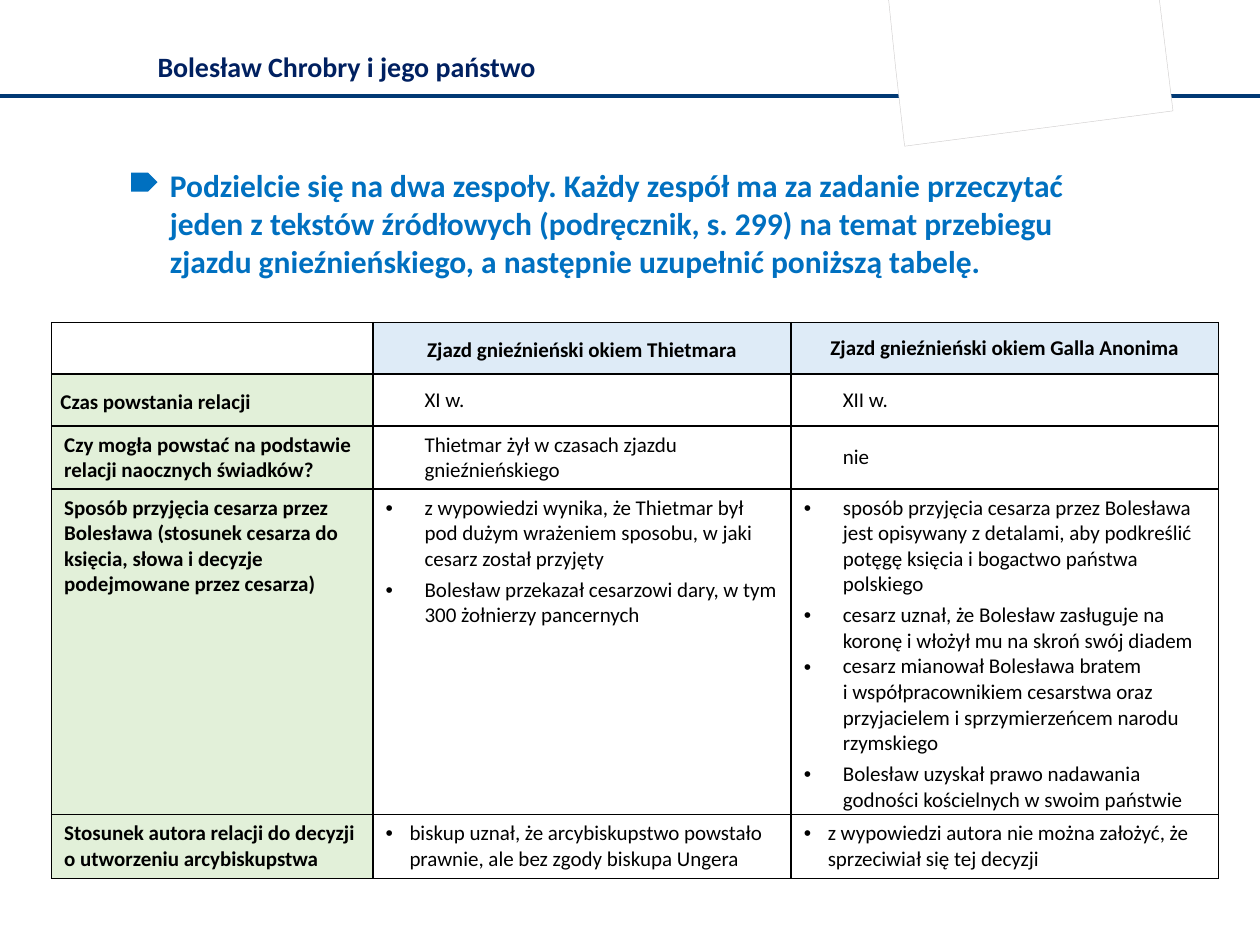
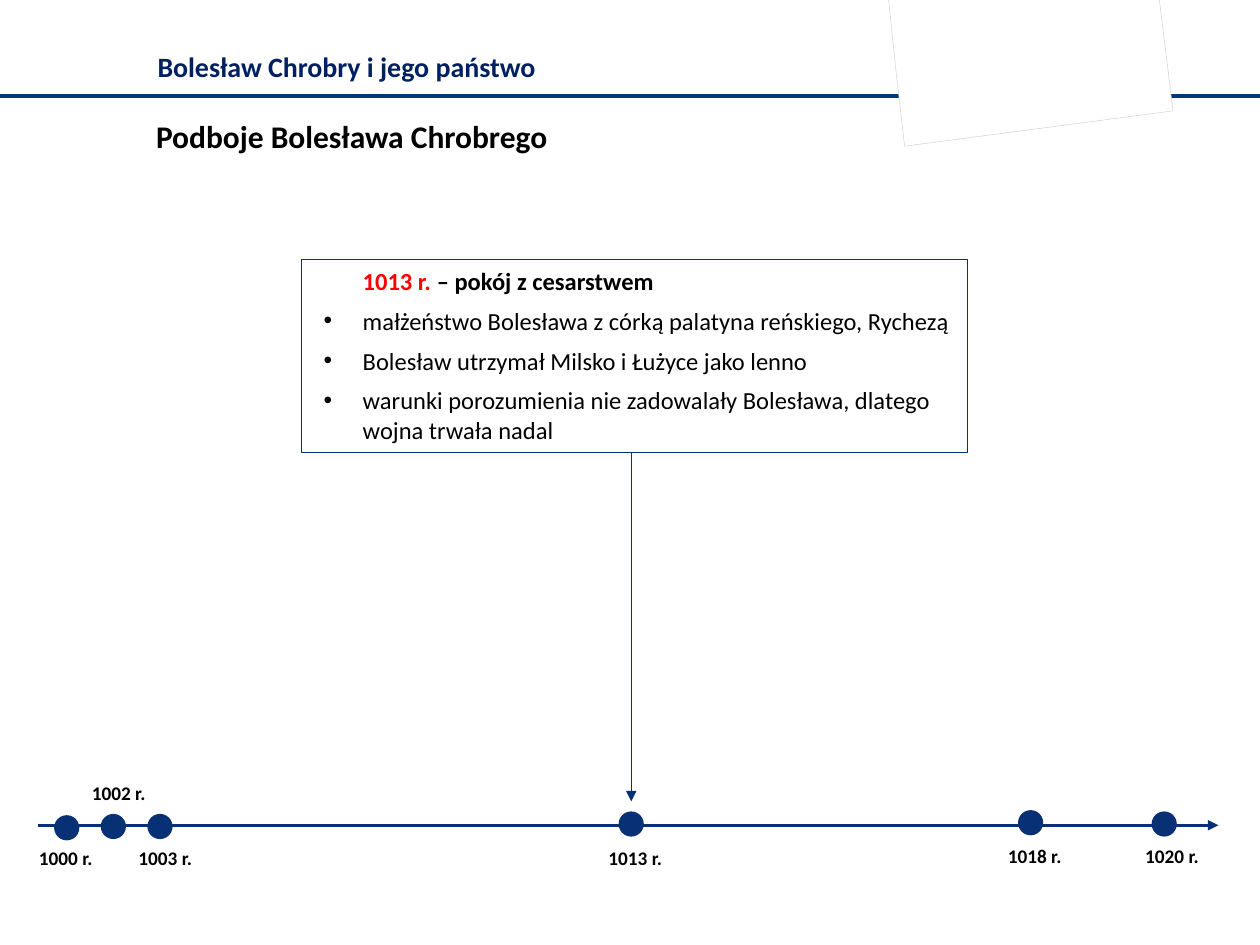
from lxml import etree
from pptx import Presentation
from pptx.dml.color import RGBColor
from pptx.enum.shapes import MSO_CONNECTOR, MSO_SHAPE
from pptx.enum.text import MSO_ANCHOR, MSO_AUTO_SIZE, PP_ALIGN
from pptx.oxml.ns import qn
from pptx.util import Inches, Pt

STRAIGHT = MSO_CONNECTOR.STRAIGHT
OVAL, RECT, PENTAGON = MSO_SHAPE.OVAL, MSO_SHAPE.RECTANGLE, MSO_SHAPE.PENTAGON
TOP, MIDDLE = MSO_ANCHOR.TOP, MSO_ANCHOR.MIDDLE
LEFT, CENTER = PP_ALIGN.LEFT, PP_ALIGN.CENTER
FONT = "Calibri"
COLORS = {
    "white": "FFFFFF", "black": "000000", "title": "002060", "rule": "013974",
    "card_edge": "D0CECE", "task": "0070C0", "header": "DEEBF7",
    "label": "E2F0D9", "timeline": "083074", "date": "FF0000",
}

LESSON = "Bolesław Chrobry i jego państwo"
CARD_CORNERS = [(9.31, 0.88), (7.18, 1.16), (7.11, 0.55), (7.05, -0.03), (9.2, -0.02)]

TASK = (
    "Podzielcie się na dwa zespoły. Każdy zespół ma za zadanie przeczytać jeden z tekstów "
    "źródłowych (podręcznik, s. 299) na temat przebiegu zjazdu gnieźnieńskiego, "
    "a następnie uzupełnić poniższą tabelę."
)
COLUMN_WIDTHS = [2.55, 3.32, 3.39]
ROW_HEIGHTS = [0.41, 0.41, 0.5, 2.58, 0.51]
HEADINGS = ["Zjazd gnieźnieński okiem Thietmara", "Zjazd gnieźnieński okiem Galla Anonima"]
# Each row: label, then the points found in each of the two accounts
ACCOUNTS = [
    ("Czas powstania relacji", ["XI w."], ["XII w."]),
    ("Czy mogła powstać na podstawie relacji naocznych świadków?",
     ["Thietmar żył w czasach zjazdu gnieźnieńskiego"], ["nie"]),
    ("Sposób przyjęcia cesarza przez Bolesława (stosunek cesarza do księcia, "
     "słowa i decyzje podejmowane przez cesarza)",
     ["z wypowiedzi wynika, że Thietmar był pod dużym wrażeniem sposobu, "
      "w jaki cesarz został przyjęty",
      "Bolesław przekazał cesarzowi dary, w tym 300 żołnierzy pancernych"],
     ["sposób przyjęcia cesarza przez Bolesława jest opisywany z detalami, "
      "aby podkreślić potęgę księcia i bogactwo państwa polskiego",
      "cesarz uznał, że Bolesław zasługuje na koronę i włożył mu na skroń swój diadem",
      "cesarz mianował Bolesława bratem\ni współpracownikiem cesarstwa oraz "
      "przyjacielem i sprzymierzeńcem narodu rzymskiego",
      "Bolesław uzyskał prawo nadawania godności kościelnych w swoim państwie"]),
    ("Stosunek autora relacji do decyzji\no utworzeniu arcybiskupstwa",
     ["biskup uznał, że arcybiskupstwo powstało prawnie, ale bez zgody biskupa Ungera"],
     ["z wypowiedzi autora nie można założyć, że sprzeciwiał się tej decyzji"]),
]
# Indent and bullet of the points, row by row
POINT_STYLES = [(0.31, False), (0.31, False), (0.31, True), (0.19, True)]

CONQUESTS = "Podboje Bolesława Chrobrego"
PEACE_DATE, PEACE = "1013 r. ", "– pokój z cesarstwem"
PEACE_TERMS = [
    "małżeństwo Bolesława z córką palatyna reńskiego, Rychezą",
    "Bolesław utrzymał Milsko i Łużyce jako lenno",
    "warunki porozumienia nie zadowalały Bolesława, dlatego wojna trwała nadal",
]
# Year, dot position, label position
EVENTS = [
    ("1000 r.", (0.43, 6.47), (0.21, 6.67)),
    ("1002 r.", (0.8, 6.46), (0.63, 6.15)),
    ("1003 r.", (1.17, 6.46), (1, 6.67)),
    ("1013 r.", (4.91, 6.44), (4.73, 6.67)),
    ("1018 r.", (8.08, 6.43), (7.9, 6.65)),
    ("1020 r.", (9.14, 6.44), (8.99, 6.65)),
]
DOT = 0.2


def rgb(color):
    return RGBColor.from_string(COLORS[color])


def add_run(paragraph, text, size, color="black", bold=False):
    for i, line in enumerate(text.split("\n")):
        if i:
            paragraph.add_line_break()
        run = paragraph.add_run()
        run.text = line
        run.font.name, run.font.size, run.font.bold = FONT, Pt(size), bold
        run.font.color.rgb = rgb(color)


def indent(paragraph, left, hanging=0):
    """Indent a paragraph; a hanging indent also gets a bullet."""
    props = paragraph._p.get_or_add_pPr()
    props.set("marL", str(Inches(left)))
    props.set("indent", str(-Inches(hanging)))
    if hanging:
        etree.SubElement(props, qn("a:buFont"), typeface="Arial")
        etree.SubElement(props, qn("a:buChar"), char="•")
    else:
        etree.SubElement(props, qn("a:buNone"))


def add_text(slide, box, text, size, color="black", wrap=True):
    frame = slide.shapes.add_textbox(*map(Inches, box)).text_frame
    frame.word_wrap = wrap
    add_run(frame.paragraphs[0], text, size, color, True)


def paint(shape, fill, edge=None, width=0):
    shape.shadow.inherit = False
    shape.fill.solid()
    shape.fill.fore_color.rgb = rgb(fill)
    if edge:
        shape.line.color.rgb = rgb(edge)
        shape.line.width = Pt(width)
    else:
        shape.line.fill.background()


def add_shape(slide, preset, box, fill, edge=None, width=0):
    shape = slide.shapes.add_shape(preset, *map(Inches, box))
    paint(shape, fill, edge, width)
    return shape


def add_line(slide, start, end, color, width, arrow=False):
    line = slide.shapes.add_connector(STRAIGHT, *map(Inches, start + end))
    line.line.color.rgb = rgb(color)
    line.line.width = Pt(width)
    if arrow:
        etree.SubElement(line.line._get_or_add_ln(), qn("a:tailEnd"), type="triangle")
    etree.SubElement(line._element.spPr, qn("a:effectLst"))


def add_lesson_slide(prs):
    """Add a slide with the lesson title, the rule and the tilted card."""
    slide = prs.slides.add_slide(prs.slide_layouts[5])
    title = slide.shapes.title
    title.left, title.top, title.width, title.height = map(Inches, (1.15, 0.21, 6.92, 0.66))
    frame = title.text_frame
    frame.auto_size, frame.vertical_anchor = MSO_AUTO_SIZE.NONE, MIDDLE
    heading = frame.paragraphs[0]
    heading.alignment, heading.line_spacing = LEFT, 0.9
    add_run(heading, LESSON, 16, "title", True)

    add_line(slide, (0, 0.76), (10, 0.76), "rule", 2)
    corners = [(Inches(x), Inches(y)) for x, y in CARD_CORNERS]
    outline = slide.shapes.build_freeform(*corners[0])
    outline.add_line_segments(corners[1:], close=True)
    paint(outline.convert_to_shape(), "white", "card_edge", 0.25)
    return slide


def style_cell(cell, fill=None, anchor=MIDDLE, tight=False):
    props = cell._tc.get_or_add_tcPr()
    for side in ("a:lnL", "a:lnR", "a:lnT", "a:lnB"):
        border = etree.SubElement(props, qn(side), w=str(Pt(1)))
        solid = etree.SubElement(border, qn("a:solidFill"))
        etree.SubElement(solid, qn("a:srgbClr"), val=COLORS["black"])
    if fill:
        cell.fill.solid()
        cell.fill.fore_color.rgb = rgb(fill)
    else:
        cell.fill.background()
    cell.vertical_anchor = anchor
    if tight:
        cell.margin_left = cell.margin_right = Inches(0.07)
        cell.margin_top = cell.margin_bottom = 0


def fill_points(frame, points, left, bulleted):
    for i, point in enumerate(points):
        paragraph = frame.add_paragraph() if i else frame.paragraphs[0]
        indent(paragraph, left, left if bulleted else 0)
        if i % 2 == 0 and len(points) > 1:
            paragraph.space_after = Pt(3)
        add_run(paragraph, point, 12)


def add_accounts_table(slide):
    table = slide.shapes.add_table(
        len(ROW_HEIGHTS), len(COLUMN_WIDTHS), Inches(0.41), Inches(2.56),
        Inches(sum(COLUMN_WIDTHS)), Inches(sum(ROW_HEIGHTS))).table
    table.first_row = table.horz_banding = False
    for column, width in zip(table.columns, COLUMN_WIDTHS):
        column.width = Inches(width)
    for row, height in zip(table.rows, ROW_HEIGHTS):
        row.height = Inches(height)

    style_cell(table.cell(0, 0))
    for c, heading in enumerate(HEADINGS, 1):
        cell = table.cell(0, c)
        style_cell(cell, "header", tight=c == 1)
        paragraph = cell.text_frame.paragraphs[0]
        paragraph.alignment = CENTER
        if c == 1:
            paragraph.line_spacing = 1.15
        add_run(paragraph, heading, 12, bold=True)

    for r, ((label, *accounts), style) in enumerate(zip(ACCOUNTS, POINT_STYLES), 1):
        anchor = TOP if style[1] else MIDDLE
        cell = table.cell(r, 0)
        style_cell(cell, "label", anchor, tight=r == 1)
        paragraph = cell.text_frame.paragraphs[0]
        if r == 1:
            paragraph.line_spacing = 1.15
        add_run(paragraph, label, 12, bold=True)
        for c, points in enumerate(accounts, 1):
            cell = table.cell(r, c)
            style_cell(cell, anchor=anchor)
            fill_points(cell.text_frame, points, *style)


def add_peace_box(slide):
    add_line(slide, (5.01, 3.49), (5.01, 6.36), "timeline", 0.5, arrow=True)
    box = add_shape(slide, RECT, (2.39, 2.06, 5.29, 1.53), "white", "timeline", 0.25)
    frame = box.text_frame
    frame.word_wrap, frame.vertical_anchor = True, TOP
    heading = frame.paragraphs[0]
    indent(heading, 0.39)
    add_run(heading, PEACE_DATE, 14, "date", True)
    add_run(heading, PEACE, 14, bold=True)
    for term in PEACE_TERMS:
        paragraph = frame.add_paragraph()
        indent(paragraph, 0.39, 0.31)
        add_run(paragraph, term, 14)
    for paragraph in frame.paragraphs:
        paragraph.alignment, paragraph.space_after = LEFT, Pt(6)


def add_timeline(slide):
    add_line(slide, (0.3, 6.55), (9.67, 6.55), "timeline", 1.75, arrow=True)
    for year, dot_at, label_at in EVENTS:
        add_shape(slide, OVAL, (*dot_at, DOT, DOT), "timeline")
        add_text(slide, (*label_at, 0.68, 0.29), year, 11, wrap=False)


def main():
    prs = Presentation()
    prs.slide_width, prs.slide_height = Inches(10), Inches(7.5)

    sources = add_lesson_slide(prs)
    add_text(sources, (1.25, 1.27, 7.78, 1.01), TASK, 18, "task")
    add_shape(sources, PENTAGON, (1.04, 1.37, 0.21, 0.15), "task")
    add_accounts_table(sources)

    conquests = add_lesson_slide(prs)
    add_text(conquests, (1.14, 0.88, 4.94, 0.4), CONQUESTS, 18)
    add_timeline(conquests)
    add_peace_box(conquests)
    prs.save("out.pptx")


if __name__ == "__main__":
    main()
